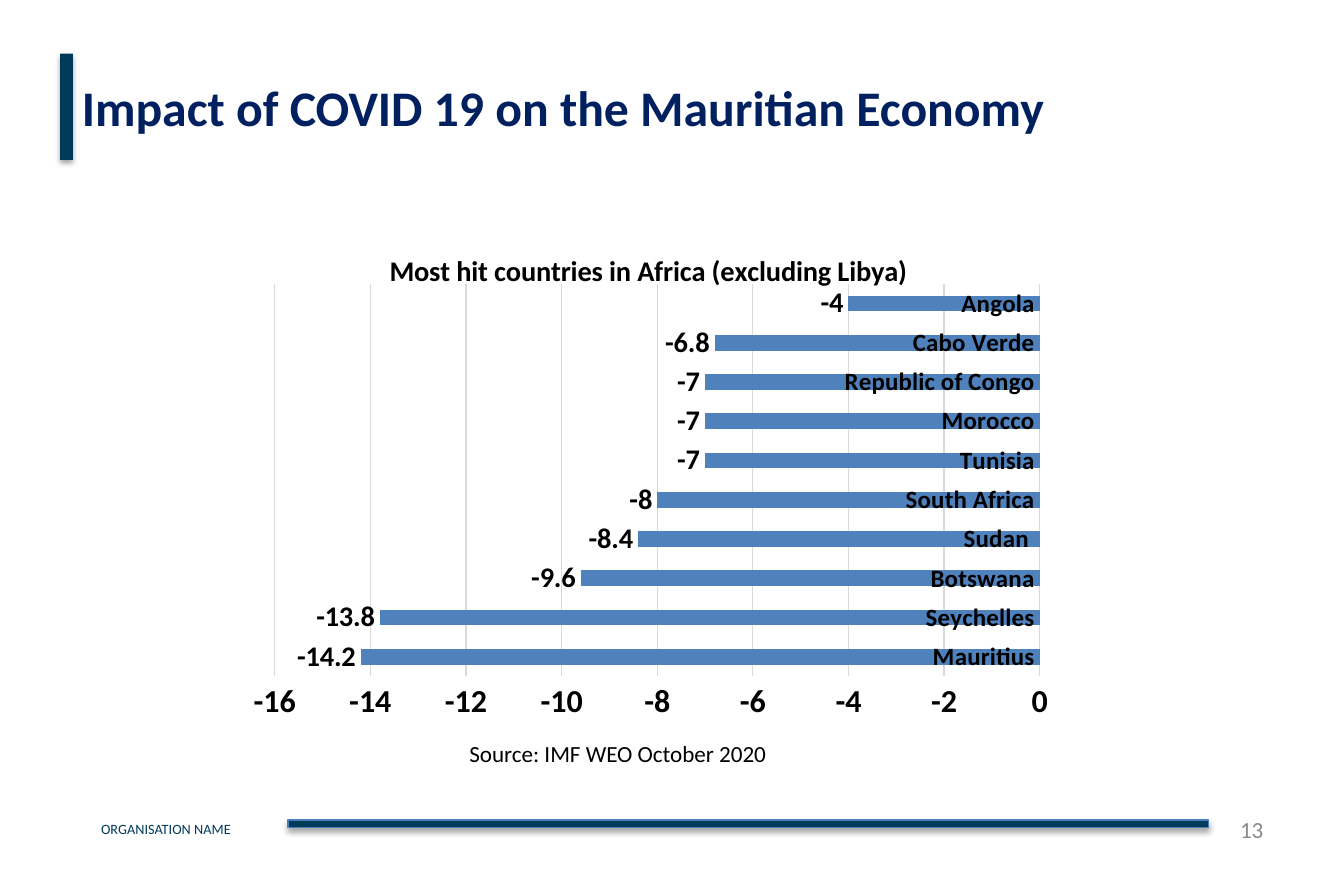
from lxml import etree
from pptx import Presentation
from pptx import util as u
from pptx.chart.data import CategoryChartData
from pptx.dml.color import RGBColor
from pptx.enum import chart as charts, shapes, text
from pptx.oxml import parse_xml
from pptx.oxml.ns import nsdecls, qn

COLORS = {
    "navy": "003A59", "edge": "4B7EBC", "title": "002060", "black": "000000",
    "gray": "8C8C8C", "bar": "4F81BD", "grid": "D9D9D9",
}
DECLINES = {
    "Mauritius": -14.2, "Seychelles": -13.8, "Botswana": -9.6, "Sudan ": -8.4,
    "South Africa": -8, "Tunisia": -7, "Morocco": -7, "Republic of Congo": -7,
    "Cabo Verde": -6.8, "Angola": -4,
}
ALIGN = text.PP_ALIGN


class SlideBuilder:
    """Hold the style and the current slide, and add each kind of element."""

    def __init__(self, page, font="Calibri"):
        self.page = page
        self.font = font

    def color(self, name):
        return RGBColor.from_string(COLORS[name])

    def assign(self, target, values):
        for name, value in values.items():
            setattr(target, name, value)

    def style(self, font, size, color="black", bold=False):
        self.assign(font, {"name": self.font, "size": u.Pt(size), "bold": bold})
        font.color.rgb = self.color(color)

    def bar(self, place, edge=None):
        bar = self.page.shapes.add_shape(
            shapes.MSO_SHAPE.RECTANGLE, *map(u.Inches, place))
        bar.fill.solid()
        bar.fill.fore_color.rgb = self.color("navy")
        if edge:
            bar.line.color.rgb = self.color(edge)
            bar.line.width = u.Pt(0.75)
        else:
            bar.line.fill.background()
        bar.shadow.inherit = False
        effects = bar._element.spPr.find(qn("a:effectLst"))
        effects.append(parse_xml(
            f'<a:outerShdw {nsdecls("a")} blurRad="{u.Pt(3.1)}" dist="{u.Pt(1.8)}" '
            'dir="5400000" rotWithShape="0"><a:srgbClr val="000000">'
            '<a:alpha val="35000"/></a:srgbClr></a:outerShdw>'))

    def label(self, words, place, size, color, align=ALIGN.LEFT,
              anchor=text.MSO_ANCHOR.MIDDLE, bold=False):
        box = self.page.shapes.add_textbox(*map(u.Inches, place))
        self.assign(box.text_frame, {
            "word_wrap": True, "vertical_anchor": anchor,
            "margin_left": u.Inches(0.11), "margin_right": u.Inches(0.11),
            "margin_top": u.Inches(0.05), "margin_bottom": u.Inches(0.05),
        })
        para = box.text_frame.paragraphs[0]
        para.alignment = align
        span = para.add_run()
        span.text = words
        self.style(span.font, size, color, bold)

    def layout(self, parent, index, values):
        for old in parent.findall(qn("c:layout")):
            parent.remove(old)
        layout = etree.Element(qn("c:layout"))
        manual = etree.SubElement(layout, qn("c:manualLayout"))
        for name, value in values.items():
            etree.SubElement(manual, qn(f"c:{name}"), val=str(value))
        parent.insert(index, layout)

    def chart(self, title, values, place):
        data = CategoryChartData()
        data.categories = list(values)
        data.add_series("Series 1", list(values.values()))
        chart = self.page.shapes.add_chart(
            charts.XL_CHART_TYPE.BAR_CLUSTERED, *map(u.Inches, place), data).chart
        self.style(chart.font, 10)
        chart.has_legend = False

        heading = chart.chart_title.text_frame
        heading.text = title
        self.style(heading.paragraphs[0].runs[0].font, 16, bold=True)
        self.layout(chart.chart_title._element, 1, {
            "xMode": "edge", "yMode": "edge", "x": 0.16, "y": 0.04})
        self.layout(chart._chartSpace.chart.plotArea, 0, {
            "layoutTarget": "inner", "xMode": "edge", "yMode": "edge",
            "x": 0.026, "y": 0.114, "w": 0.934, "h": 0.779})

        for axis, size in ((chart.category_axis, 14), (chart.value_axis, 18)):
            self.assign(axis, {
                "major_tick_mark": charts.XL_TICK_MARK.NONE,
                "minor_tick_mark": charts.XL_TICK_MARK.NONE,
            })
            axis.format.line.fill.background()
            self.style(axis.tick_labels.font, size, bold=True)
        self.assign(chart.value_axis, {
            "minimum_scale": -16, "maximum_scale": 0, "major_unit": 2,
            "has_major_gridlines": True})
        grid = chart.value_axis.major_gridlines.format.line
        grid.color.rgb = self.color("grid")
        grid.width = u.Pt(0.75)

        plot = chart.plots[0]
        self.assign(plot, {
            "gap_width": 150, "vary_by_categories": False, "has_data_labels": True})
        self.assign(plot.data_labels, {
            "show_value": True, "position": charts.XL_LABEL_POSITION.OUTSIDE_END})
        self.style(plot.data_labels.font, 16, bold=True)
        series = plot.series[0]
        series.invert_if_negative = False
        series.format.fill.solid()
        series.format.fill.fore_color.rgb = self.color("bar")


def main():
    deck = Presentation()
    deck.slide_width, deck.slide_height = u.Inches(10.5), u.Inches(6.8)
    page = SlideBuilder(deck.slides.add_slide(deck.slide_layouts[6]))
    page.bar((0.47, 0.42, 0.1, 0.83))
    page.bar((2.25, 6.41, 7.19, 0.06), edge="edge")
    page.label("ORGANISATION NAME", (0.68, 6.36, 1.57, 0.25), 8, "navy",
               anchor=text.MSO_ANCHOR.TOP)
    page.label("Source: IMF WEO October 2020", (3.16, 5.71, 3.33, 0.36), 13,
               "black", ALIGN.CENTER)
    page.label("13", (7.53, 6.3, 2.45, 0.36), 13, "gray", ALIGN.RIGHT)
    page.label("Impact of COVID 19 on the Mauritian Economy",
               (0.53, 0.27, 9.45, 1.13), 28, "title", bold=True)
    page.chart("Most hit countries in Africa (excluding Libya)", DECLINES,
               (1.98, 1.77, 6.4, 3.94))
    deck.save("out.pptx")


if __name__ == "__main__":
    main()
